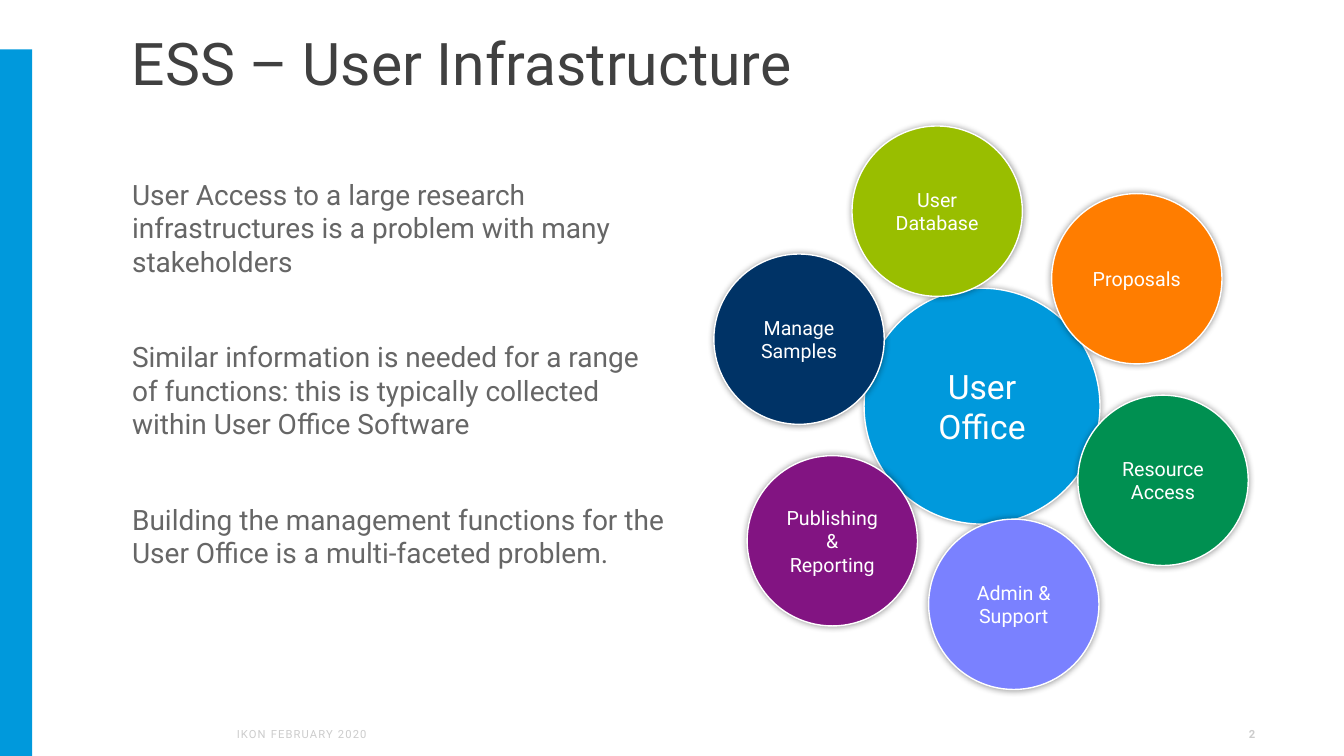
import pptx
import pptx.dml.color
import pptx.enum.shapes
import pptx.enum.text
import pptx.oxml
import pptx.oxml.ns
import pptx.util

Inches = pptx.util.Inches
Pt = pptx.util.Pt
RGBColor = pptx.dml.color.RGBColor
MSO_SHAPE = pptx.enum.shapes.MSO_SHAPE
ANCHOR = pptx.enum.text.MSO_ANCHOR
ALIGN = pptx.enum.text.PP_ALIGN

WHITE = RGBColor(0xFF, 0xFF, 0xFF)
BLUE = RGBColor(0x00, 0x99, 0xDC)
LIME = RGBColor(0x99, 0xBE, 0x00)
ORANGE = RGBColor(0xFF, 0x7D, 0x00)
GREEN = RGBColor(0x00, 0x90, 0x51)
LAVENDER = RGBColor(0x7A, 0x81, 0xFF)
NAVY = RGBColor(0x00, 0x33, 0x66)
PURPLE = RGBColor(0x82, 0x14, 0x82)
TITLE_GREY = RGBColor(0x40, 0x40, 0x40)
BODY_GREY = RGBColor(0x66, 0x66, 0x66)
FOOTER_GREY = RGBColor(0xCC, 0xCC, 0xCC)


def write(shape, *paragraphs, size, color, bold=False, align=ALIGN.LEFT,
          anchor=ANCHOR.TOP, margins=(0.1, 0.05, 0.1, 0.05),
          line_spacing=None, gap=0, tracking=None):
    """Fill the shape with paragraphs; margins run left, top, right, bottom."""
    frame = shape.text_frame
    frame.word_wrap = True
    frame.vertical_anchor = anchor
    (frame.margin_left, frame.margin_top,
     frame.margin_right, frame.margin_bottom) = map(Inches, margins)
    for index, text in enumerate(paragraphs):
        paragraph = frame.add_paragraph() if index else frame.paragraphs[0]
        paragraph.alignment = align
        if line_spacing:
            paragraph.line_spacing = line_spacing
        if index:
            paragraph.space_before = Pt(gap)
        run = paragraph.add_run()
        run.text = text
        run.font.name = "Roboto"
        run.font.size = Pt(size)
        run.font.bold = bold
        run.font.color.rgb = color
        if tracking:
            run._r.get_or_add_rPr().set("spc", str(tracking))


def add_circle(label, left, top, diameter, fill, size):
    circle = shapes.add_shape(MSO_SHAPE.OVAL, Inches(left), Inches(top),
                              Inches(diameter), Inches(diameter))
    circle.fill.solid()
    circle.fill.fore_color.rgb = fill
    circle.line.color.rgb = WHITE
    circle.line.width = Pt(1)
    circle.shadow.inherit = False
    effects = circle._element.spPr.find(pptx.oxml.ns.qn("a:effectLst"))
    effects.append(pptx.oxml.parse_xml(
        f'<a:outerShdw {pptx.oxml.ns.nsdecls("a")} blurRad="{Pt(5)}" dist="0" dir="0"'
        ' rotWithShape="0"><a:srgbClr val="000000"><a:alpha val="40000"/>'
        '</a:srgbClr></a:outerShdw>'))
    write(circle, label, size=size, color=WHITE, align=ALIGN.CENTER,
          anchor=ANCHOR.MIDDLE)


deck = pptx.Presentation()
deck.slide_width = Inches(13.33)
deck.slide_height = Inches(7.5)
shapes = deck.slides.add_slide(deck.slide_layouts[6]).shapes

side_bar = shapes.add_shape(MSO_SHAPE.RECTANGLE, Inches(0), Inches(0.49),
                            Inches(0.32), Inches(7.01))
side_bar.fill.solid()
side_bar.fill.fore_color.rgb = BLUE
side_bar.line.fill.background()
side_bar.shadow.inherit = False

title = shapes.add_textbox(Inches(1.21), Inches(0.29), Inches(10.24), Inches(0.72))
write(title, "ESS – User Infrastructure", size=42, color=TITLE_GREY,
      line_spacing=0.9, margins=(0.1, 0.05, 0.1, 0.02))

event = shapes.add_textbox(Inches(2.25), Inches(7.08), Inches(4.72), Inches(0.4))
write(event, "IKON FEBRUARY 2020", size=8, color=FOOTER_GREY,
      anchor=ANCHOR.MIDDLE, tracking=80)

page_number = shapes.add_textbox(Inches(9.55), Inches(7.08), Inches(3), Inches(0.4))
write(page_number, "2", size=8, color=FOOTER_GREY, bold=True,
      align=ALIGN.RIGHT, anchor=ANCHOR.MIDDLE)

message = shapes.add_textbox(Inches(1.31), Inches(1.71), Inches(5.35), Inches(5.21))
write(message,
      "User Access to a large research infrastructures is a problem with many stakeholders",
      "Similar information is needed for a range of functions: this is typically "
      "collected within User Office Software",
      "Building the management functions for the User Office is a multi-faceted problem.",
      size=20, color=BODY_GREY, gap=44, margins=(0, 0.05, 0.02, 0.05))

add_circle("User Office", 8.57, 2.86, 2.34, BLUE, size=24)
office_functions = [
    ("User Database", 8.45, 1.25, LIME),
    ("Proposals", 10.43, 1.92, ORANGE),
    ("Resource Access", 10.69, 3.92, GREEN),
    ("Admin & Support", 9.21, 5.15, LAVENDER),
    ("Manage Samples", 7.08, 2.52, NAVY),
    ("Publishing & Reporting", 7.41, 4.52, PURPLE),
]
for label, left, top, fill in office_functions:
    add_circle(label, left, top, 1.69, fill, size=14)

deck.save("out.pptx")
